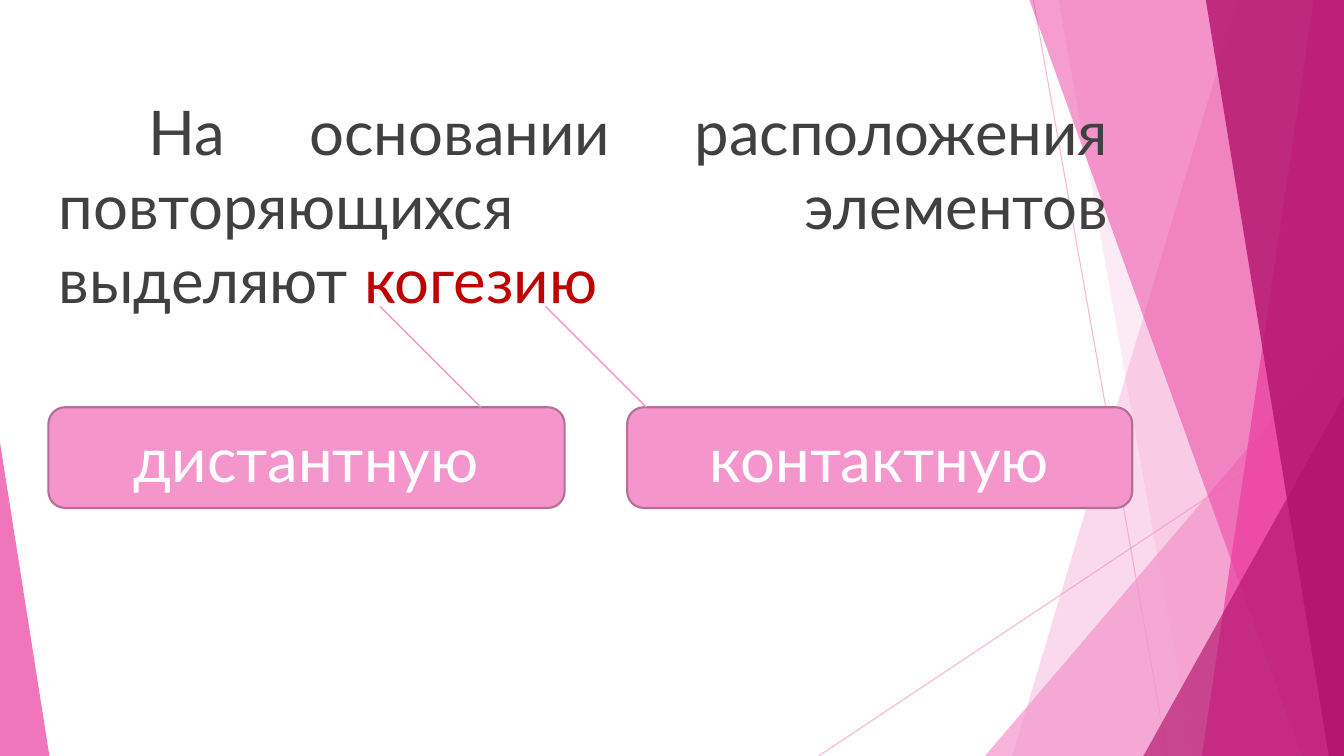
from lxml.etree import SubElement
from pptx import Presentation
from pptx.dml.color import RGBColor
from pptx.enum.shapes import MSO_CONNECTOR, MSO_SHAPE
from pptx.enum.text import MSO_ANCHOR, MSO_AUTO_SIZE, PP_ALIGN
from pptx.oxml.ns import qn
from pptx.util import Inches, Pt

WIDTH, HEIGHT = 13.33, 7.5
PINK = RGBColor(0xF4, 0x96, 0xCB)
ROSE = RGBColor(0xEB, 0x3D, 0x9F)
PLUM = RGBColor(0xB2, 0x13, 0x6D)
MAUVE = RGBColor(0xB5, 0x6F, 0x96)
GREY = RGBColor(0x40, 0x40, 0x40)
RED = RGBColor(0xC0, 0x00, 0x00)
WHITE = RGBColor(0xFF, 0xFF, 0xFF)
FONT, SIZE = "Lato", Pt(44)


def set_alpha(fill_parent, percent):
    """Set the opacity of the solid fill directly inside an element."""
    color = fill_parent.find(qn("a:solidFill"))[0]
    SubElement(color, qn("a:alpha"), val=str(percent * 1000))


def add_run(p, text, color):
    """Append one run in the slide's font."""
    r = p.add_run()
    r.text = text
    r.font.name, r.font.size = FONT, SIZE
    r.font.color.rgb = color


def add_line(s, start, end, width, alpha=100):
    """Draw a straight pink line between two points."""
    ends = [Inches(v) for v in (*start, *end)]
    sp = s.shapes.add_connector(MSO_CONNECTOR.STRAIGHT, *ends)
    sp.line.color.rgb, sp.line.width = PINK, Pt(width)
    if alpha < 100:
        set_alpha(sp.line._get_or_add_ln(), alpha)
    SubElement(sp._element.spPr, qn("a:effectLst"))


def paint_facet(sp, color, alpha):
    """Give a background facet its translucent fill and no outline."""
    sp.shadow.inherit = False
    sp.fill.solid()
    sp.fill.fore_color.rgb = color
    set_alpha(sp._element.spPr, alpha)
    sp.line.fill.background()


def add_band(s, top_x, bottom_x, color, alpha):
    """Draw a full-height band from a slanted edge to the right margin."""
    right, bottom = Inches(WIDTH), Inches(HEIGHT)
    builder = s.shapes.build_freeform(Inches(top_x), 0)
    builder.add_line_segments([(right, 0), (right, bottom), (Inches(bottom_x), bottom)])
    paint_facet(builder.convert_to_shape(), color, alpha)


def add_corner(s, x, y, w, apex, color, alpha):
    """Draw a triangle standing on the bottom edge of the slide."""
    box = [Inches(v) for v in (x, y, w, HEIGHT - y)]
    sp = s.shapes.add_shape(MSO_SHAPE.ISOSCELES_TRIANGLE, *box)
    sp.adjustments[0] = apex
    paint_facet(sp, color, alpha)


def add_facets(s):
    """Build the faceted background from back to front."""
    add_line(s, (10.25, 0), (11.58, HEIGHT), 0.75, 70)
    add_line(s, (WIDTH, 4.03), (8.12, HEIGHT), 0.75, 70)
    add_band(s, 12.28, 10.04, PINK, 36)
    add_band(s, 10.5, 11.83, PINK, 20)
    add_corner(s, 9.77, 3.33, WIDTH - 9.77, 1, PINK, 72)
    add_band(s, 10.21, 12.91, ROSE, 50)
    add_band(s, 13.03, 11.92, ROSE, 70)
    add_band(s, 11.96, 13.18, PLUM, 80)
    add_corner(s, 11.34, 3.93, WIDTH - 11.34, 1, PLUM, 66)
    add_corner(s, 0, 4.39, 0.49, 0, ROSE, 70)


def add_statement(s, x, y, w, h):
    """Place the justified statement in the body placeholder."""
    sp = s.placeholders[1]
    sp.left, sp.top, sp.width, sp.height = [Inches(v) for v in (x, y, w, h)]
    s.shapes._spTree.append(sp._element)
    tf = sp.text_frame
    tf.word_wrap, tf.auto_size = True, MSO_AUTO_SIZE.NONE
    tf.vertical_anchor = MSO_ANCHOR.TOP
    p = tf.paragraphs[0]
    p.alignment, p.space_before = PP_ALIGN.JUSTIFY, Pt(0)
    pPr = p._p.get_or_add_pPr()
    pPr.set("marL", "0")
    pPr.set("indent", str(Inches(0.89)))
    SubElement(pPr, qn("a:buNone"))
    add_run(p, "На основании расположения повторяющихся элементов выделяют ", GREY)
    add_run(p, "когезию", RED)


def add_kind(s, x, y, w, h, text, link_x):
    """Draw one kind of cohesion as a box with a diagonal link above it."""
    box = [Inches(v) for v in (x, y, w, h)]
    sp = s.shapes.add_shape(MSO_SHAPE.ROUNDED_RECTANGLE, *box)
    sp.shadow.inherit = False
    sp.fill.solid()
    sp.fill.fore_color.rgb = PINK
    sp.line.color.rgb, sp.line.width = MAUVE, Pt(1.5)
    tf = sp.text_frame
    tf.word_wrap, tf.vertical_anchor = True, MSO_ANCHOR.MIDDLE
    p = tf.paragraphs[0]
    p.alignment = PP_ALIGN.CENTER
    add_run(p, text, WHITE)
    add_line(s, (link_x, y - 1), (link_x + 1, y), 1)


def main():
    """Build and save the slide."""
    prs = Presentation()
    prs.slide_width, prs.slide_height = Inches(WIDTH), Inches(HEIGHT)
    s = prs.slides.add_slide(prs.slide_layouts[1])
    title = s.shapes.title._element
    title.getparent().remove(title)
    add_facets(s)
    add_statement(s, 0.48, 0.88, 10.62, 5.73)
    add_kind(s, 0.48, 4.04, 5.12, 1, "дистантную", 3.77)
    add_kind(s, 6.22, 4.04, 5.01, 1, "контактную", 5.41)
    prs.save("out.pptx")


if __name__ == "__main__":
    main()
